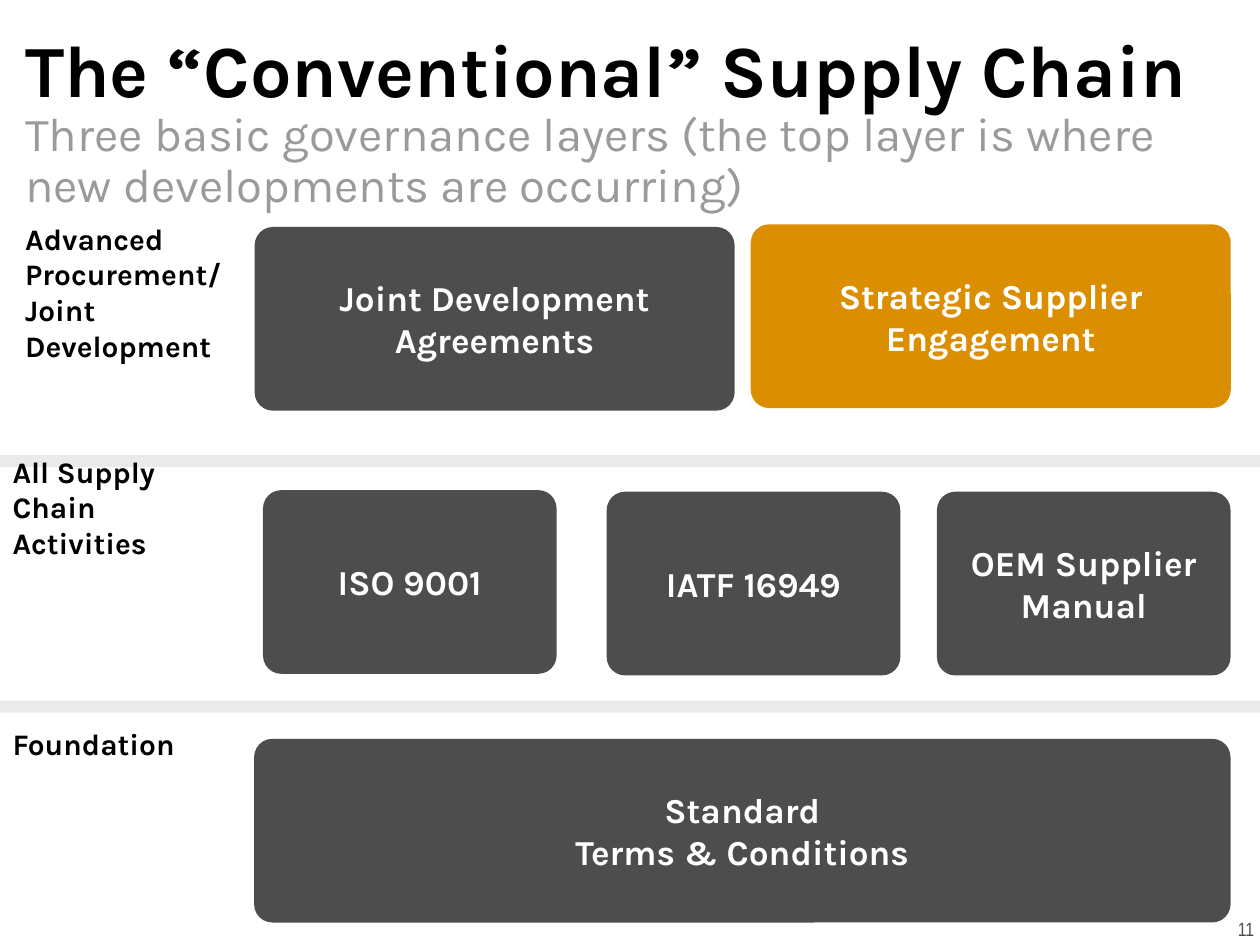
"""Build the supply chain governance layers slide."""
import pptx
import pptx.util
import pptx.dml.color
import pptx.enum.shapes
import pptx.enum.text
import pptx.oxml
import pptx.oxml.ns

Pt = pptx.util.Pt
SHAPE = pptx.enum.shapes.MSO_SHAPE
ALIGN = pptx.enum.text.PP_ALIGN
ANCHOR = pptx.enum.text.MSO_ANCHOR
GRAY, ORANGE, BLACK, WHITE = "4D4D4D", "DA8E00", "000000", "FFFFFF"
BOX_HEIGHT = 105


def rgb(value):
    return pptx.dml.color.RGBColor.from_string(value)


def write(sp, text, size, color, bold=False, align=ALIGN.LEFT,
          anchor=ANCHOR.MIDDLE, font="Karla", spacing=None, wrap=True):
    tf = sp.text_frame
    tf.text = text
    tf.word_wrap = wrap
    tf.vertical_anchor = anchor
    tf.margin_left = tf.margin_right = tf.margin_top = tf.margin_bottom = 0
    for p in tf.paragraphs:
        p.alignment = align
        p.line_spacing = spacing
        for r in p.runs:
            r.font.name = font
            r.font.size = Pt(size)
            r.font.bold = bold
            r.font.color.rgb = rgb(color)


def add_text(s, x, y, w, h, text, size, color, **style):
    sp = s.shapes.add_textbox(Pt(x), Pt(y), Pt(w), Pt(h))
    write(sp, text, size, color, **style)


def add_filled(s, kind, x, y, w, h, color):
    sp = s.shapes.add_shape(kind, Pt(x), Pt(y), Pt(w), Pt(h))
    sp.shadow.inherit = False
    sp.fill.solid()
    sp.fill.fore_color.rgb = rgb(color)
    sp.line.fill.background()
    return sp


def add_divider(s, y):
    sp = add_filled(s, SHAPE.RECTANGLE, 0, y, 720, 7, "343434")
    clr = sp.fill._xPr.find(".//" + pptx.oxml.ns.qn("a:srgbClr"))
    clr.append(pptx.oxml.parse_xml(
        "<a:alpha %s val='10000'/>" % pptx.oxml.ns.nsdecls("a")))


def add_box(s, x, y, w, text, color=GRAY):
    sp = add_filled(s, SHAPE.ROUNDED_RECTANGLE, x, y, w, BOX_HEIGHT, color)
    sp.adjustments[0] = 0.1
    write(sp, text, 20, WHITE, bold=True, align=ALIGN.CENTER)


def main():
    prs = pptx.Presentation()
    prs.slide_width, prs.slide_height = Pt(720), Pt(540)
    s = prs.slides.add_slide(prs.slide_layouts[6])

    add_text(s, 14.4, 14.4, 692, 49, "The “Conventional” Supply Chain",
             42, BLACK, bold=True)
    add_text(s, 14.4, 63.4, 692, 57.6,
             "Three basic governance layers (the top layer is where "
             "new developments are occurring)",
             27, "9A9A9A", anchor=ANCHOR.TOP, spacing=0.9)
    add_text(s, 703.4, 524.2, 17.3, 13, "11", 11, GRAY, align=ALIGN.CENTER,
             anchor=ANCHOR.TOP, font="Arial Narrow", wrap=False)

    for y in (260, 400.3):
        add_divider(s, y)

    for x, y, text in (
        (14.4, 157, "Advanced Procurement/ Joint Development"),
        (7.2, 280, "All Supply Chain Activities"),
        (7.2, 415.5, "Foundation"),
    ):
        add_text(s, x, y, 122.4, 19.4, text, 17, BLACK, bold=True)

    for x, y, w, text, color in (
        (145.5, 129.7, 274.3, "Joint Development Agreements", GRAY),
        (429, 128.2, 274.3, "Strategic Supplier\nEngagement", ORANGE),
        (150.3, 280.1, 167.8, "ISO 9001", GRAY),
        (346.7, 281, 167.8, "IATF 16949", GRAY),
        (535.4, 281, 167.8, "OEM Supplier Manual", GRAY),
        (145.2, 422.2, 558, "Standard\nTerms & Conditions", GRAY),
    ):
        add_box(s, x, y, w, text, color)

    prs.save("out.pptx")


if __name__ == "__main__":
    main()
